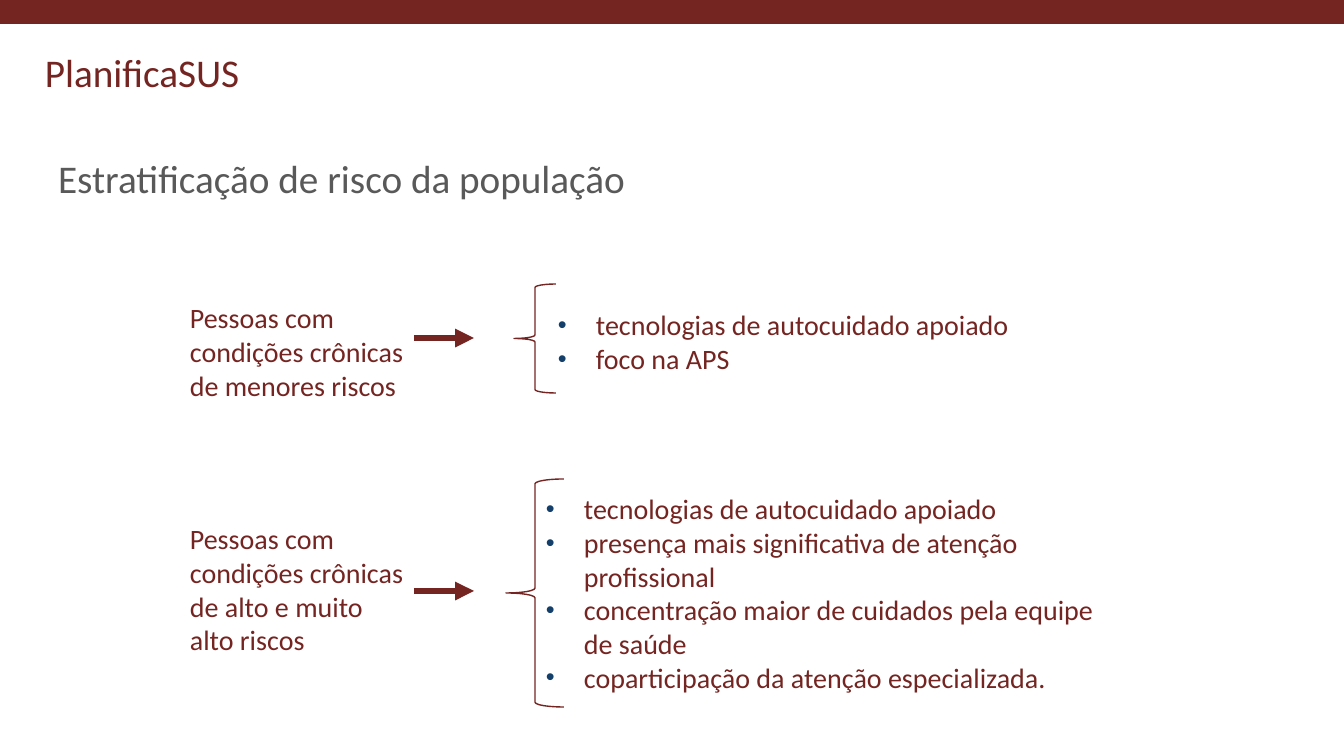
from lxml import etree
from pptx import Presentation
from pptx.dml.color import RGBColor
from pptx.enum.shapes import MSO_CONNECTOR, MSO_SHAPE
from pptx.enum.text import MSO_ANCHOR, PP_ALIGN
from pptx.oxml.ns import qn
from pptx.util import Pt

STRAIGHT = MSO_CONNECTOR.STRAIGHT
RECTANGLE, LEFT_BRACE = MSO_SHAPE.RECTANGLE, MSO_SHAPE.LEFT_BRACE
MIDDLE = MSO_ANCHOR.MIDDLE
LEFT, JUSTIFY = PP_ALIGN.LEFT, PP_ALIGN.JUSTIFY
RIGHT_SIDE = 3
SCALE = 12192000 / 1344
COLORS = {"wine": "742521", "gray": "595959", "navy": "143F6A"}


def px(value):
    return round(value * SCALE)


def color(name):
    return RGBColor.from_string(COLORS[name])


class SlideBuilder:
    font_name = "Calibri"

    def __init__(self, prs):
        self.slide = prs.slides.add_slide(prs.slide_layouts[5])
        self.shapes = self.slide.shapes

    def style(self, paragraph, size, color_name):
        paragraph.font.name = self.font_name
        paragraph.font.size = Pt(size)
        paragraph.font.color.rgb = color(color_name)

    def title(self, text, *box):
        title = self.shapes.title
        title.left, title.top, title.width, title.height = map(px, box)
        frame = title.text_frame
        frame.text = text
        frame.word_wrap = True
        frame.vertical_anchor = MIDDLE
        paragraph = frame.paragraphs[0]
        paragraph.alignment = LEFT
        paragraph.line_spacing = 0.9
        self.style(paragraph, 28, "gray")

    def text(self, text, *box, size=20, wrap=True):
        label = self.shapes.add_textbox(*map(px, box))
        label.text_frame.word_wrap = wrap
        label.text_frame.text = text
        self.style(label.text_frame.paragraphs[0], size, "wine")
        return label

    def bullets(self, items, *box, align=LEFT):
        frame = self.shapes.add_textbox(*map(px, box)).text_frame
        frame.word_wrap = True
        frame.text = "\n".join(items)
        for paragraph in frame.paragraphs:
            paragraph.alignment = align
            props = paragraph._p.get_or_add_pPr()
            props.set("marL", str(px(38)))
            props.set("indent", str(px(-38)))
            bullet_color = etree.SubElement(props, qn("a:buClr"))
            etree.SubElement(bullet_color, qn("a:srgbClr"), val=COLORS["navy"])
            etree.SubElement(props, qn("a:buSzPct"), val="90000")
            etree.SubElement(props, qn("a:buFont"), typeface="Arial")
            etree.SubElement(props, qn("a:buChar"), char="•")
            self.style(paragraph, 20, "wine")

    def bar(self, *box):
        bar = self.shapes.add_shape(RECTANGLE, *map(px, box))
        bar.shadow.inherit = False
        bar.fill.solid()
        bar.fill.fore_color.rgb = color("wine")
        bar.line.fill.background()

    def brace(self, *box):
        brace = self.shapes.add_shape(LEFT_BRACE, *map(px, box))
        brace.shadow.inherit = False
        brace.fill.background()
        brace.line.color.rgb = color("wine")
        brace.line.width = Pt(1)

    def arrow(self, left, right, y, origin=None):
        arrow = self.shapes.add_connector(STRAIGHT, px(left), px(y), px(right), px(y))
        arrow.line.color.rgb = color("wine")
        arrow.line.width = Pt(4.5)
        etree.SubElement(arrow.line._get_or_add_ln(), qn("a:tailEnd"), type="triangle")
        etree.SubElement(arrow._element.spPr, qn("a:effectLst"))
        if origin is not None:
            arrow.begin_connect(origin, RIGHT_SIDE)


def main():
    prs = Presentation()
    prs.slide_width, prs.slide_height = px(1344), px(756)
    page = SlideBuilder(prs)

    page.bar(0, 0, 1344, 24)
    page.text("PlanificaSUS", 35, 43, 217, 57, size=28, wrap=False)
    page.title("Estratificação de risco da população", 48, 108, 1108, 146)

    page.text("Pessoas com condições crônicas de menores riscos", 180, 296, 234, 141)
    high_risk = page.text("Pessoas com condições crônicas de alto e muito alto riscos",
                          180, 517, 234, 148)

    self_care = "tecnologias de autocuidado apoiado"
    page.bullets([self_care, "foco na APS"], 548, 303, 549, 94, align=JUSTIFY)
    page.bullets([
        self_care,
        "presença mais significativa de atenção profissional",
        "concentração maior de cuidados pela equipe de saúde",
        "coparticipação da atenção especializada.",
    ], 536, 487, 600, 224)

    page.brace(514, 284, 42, 109)
    page.brace(506, 479, 58, 228)
    page.arrow(414, 474, 338)
    page.arrow(414, 474, 591, origin=high_risk)

    prs.save("out.pptx")


if __name__ == "__main__":
    main()
